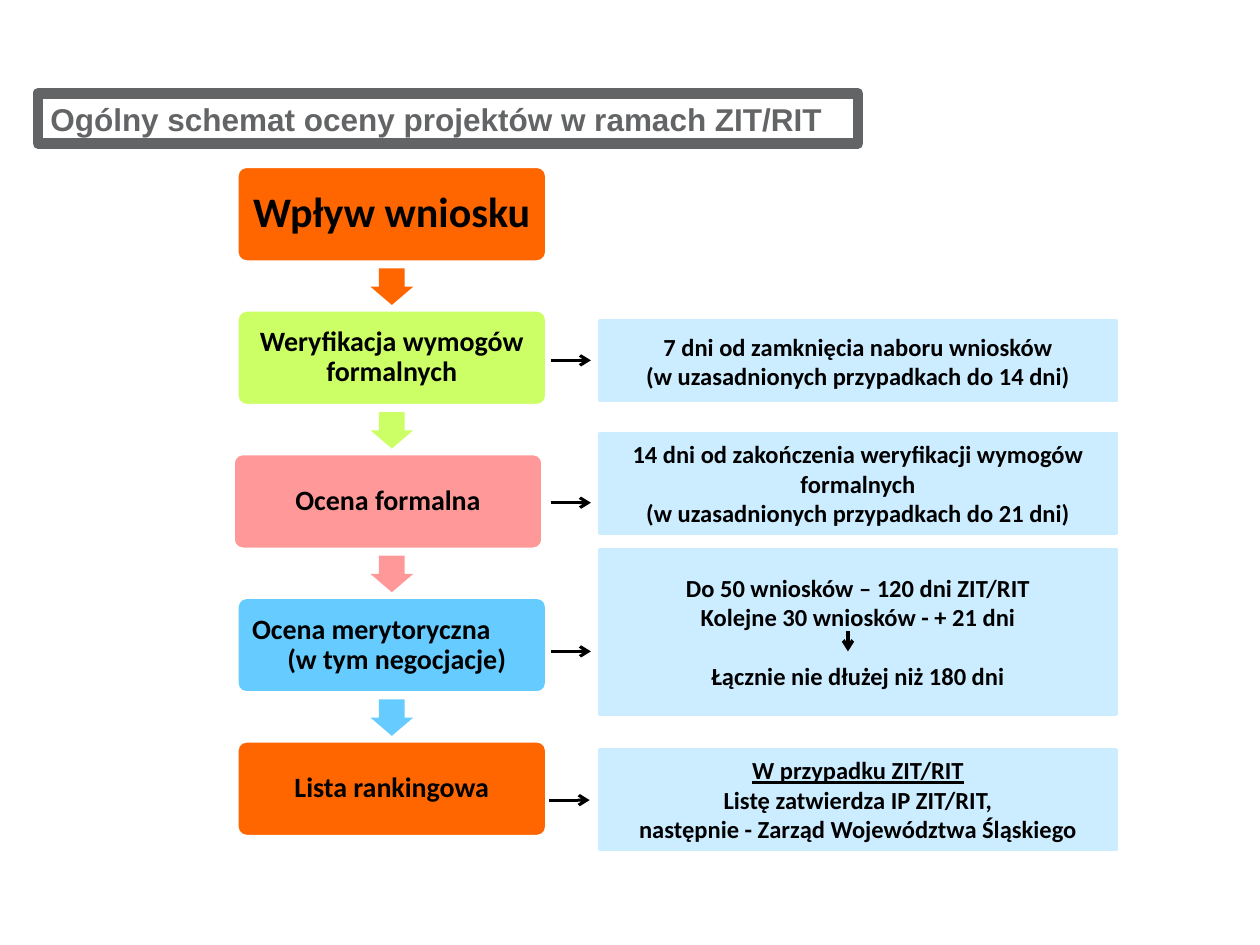
import pptx
import pptx.util
import pptx.dml.color
import pptx.enum.shapes
import pptx.enum.text
import pptx.oxml.ns
import lxml.etree

Inches = pptx.util.Inches
Pt = pptx.util.Pt
SHAPES = pptx.enum.shapes.MSO_SHAPE
ALIGN = pptx.enum.text.PP_ALIGN
ANCHOR = pptx.enum.text.MSO_ANCHOR

STEP_LEFT, STEP_TOP, STEP_PITCH = 1.88, 1.32, 1.14
STEP_WIDTH, STEP_HEIGHT = 2.46, 0.76

STEPS = [
    ("Wpływ wniosku", "FF6600", 0, 24),
    ("Weryfikacja wymogów formalnych", "CCFF66", 0, 16),
    ("Ocena formalna", "FF9999", -0.03, 16),
    ("Ocena merytoryczna\n(w tym negocjacje)", "66CCFF", 0, 16),
    ("Lista rankingowa", "FF6600", 0, 16),
]
DEADLINES = [
    (2.55, 0.63, "7 dni od zamknięcia naboru wniosków\n"
                 "(w uzasadnionych przypadkach do 14 dni)"),
    (3.44, 0.79, "14 dni od zakończenia weryfikacji wymogów formalnych\n"
                 "(w uzasadnionych przypadkach do 21 dni)"),
    (4.36, 1.31, "Do 50 wniosków – 120 dni ZIT/RIT\n"
                 "Kolejne 30 wniosków - + 21 dni\n"
                 "Łącznie nie dłużej niż 180 dni"),
    (5.95, 0.79, "W przypadku ZIT/RIT\n"
                 "Listę zatwierdza IP ZIT/RIT,\n"
                 "następnie - Zarząd Województwa Śląskiego"),
]
LINKS = [(4.37, 2.86), (4.37, 3.99), (4.37, 5.17), (4.36, 6.35)]


def rgb(color):
    return pptx.dml.color.RGBColor.from_string(color)


def write_text(shape, text, size, color="000000", font="Calibri", align=ALIGN.CENTER):
    frame = shape.text_frame
    frame.text = text
    frame.word_wrap = True
    frame.vertical_anchor = ANCHOR.MIDDLE
    for para in frame.paragraphs:
        para.alignment = align
        for span in para.runs:
            span.font.size = Pt(size)
            span.font.name = font
            span.font.bold = True
            span.font.color.rgb = rgb(color)
    return frame


def add_block(page, kind, left, top, width, height, fill, line=None):
    shape = page.shapes.add_shape(
        kind, Inches(left), Inches(top), Inches(width), Inches(height))
    shape.shadow.inherit = False
    shape.fill.solid()
    shape.fill.fore_color.rgb = rgb(fill)
    if line:
        shape.line.color.rgb = rgb(line)
        shape.line.width = Pt(2)
    else:
        shape.line.fill.background()
    return shape


def add_step(page, left, top, text, color, size):
    box = add_block(page, SHAPES.ROUNDED_RECTANGLE, left, top,
                    STEP_WIDTH, STEP_HEIGHT, color, "FFFFFF")
    box.adjustments[0] = 0.1
    frame = write_text(box, text, size)
    inset = Inches(0.1)
    frame.margin_left = frame.margin_right = inset
    frame.margin_top = frame.margin_bottom = inset
    for para in frame.paragraphs:
        para.line_spacing = 0.9
    return frame


def add_down_arrow(page, top, color):
    arrow = add_block(page, SHAPES.DOWN_ARROW, 2.94, top, 0.34, 0.29, color)
    arrow.adjustments[0] = 0.6
    arrow.adjustments[1] = 0.5


def add_deadline(page, top, height, text):
    box = add_block(page, SHAPES.RECTANGLE, 4.76, top, 4.1, height, "CCECFF", "CCECFF")
    return write_text(box, text, 14)


def add_arrow(page, start, end, width):
    arrow = page.shapes.add_connector(
        pptx.enum.shapes.MSO_CONNECTOR.STRAIGHT,
        *(Inches(value) for value in start + end))
    arrow.line.color.rgb = rgb("000000")
    arrow.line.width = Pt(width)
    qn = pptx.oxml.ns.qn
    lxml.etree.SubElement(arrow.line._get_or_add_ln(), qn("a:tailEnd"), type="arrow")
    lxml.etree.SubElement(arrow._element.spPr, qn("a:effectLst"))


def set_title(page, text):
    title = page.shapes.title
    title.left, title.top = Inches(0.3), Inches(0.74)
    title.width, title.height = Inches(6.51), Inches(0.4)
    title.line.color.rgb = rgb("636466")
    title.line.width = Pt(6)
    frame = write_text(title, text, 18, "636466", "Arial", ALIGN.LEFT)
    frame.auto_size = pptx.enum.text.MSO_AUTO_SIZE.NONE
    frame.vertical_anchor = ANCHOR.TOP


def main():
    deck = pptx.Presentation()
    deck.slide_width, deck.slide_height = Inches(10), Inches(7.5)
    page = deck.slides.add_slide(deck.slide_layouts[5])
    set_title(page, "Ogólny schemat oceny projektów w ramach ZIT/RIT")

    step_frames = []
    for index, (text, color, shift, size) in enumerate(STEPS):
        top = STEP_TOP + index * STEP_PITCH
        step_frames.append(add_step(page, STEP_LEFT + shift, top, text, color, size))
        if index < len(STEPS) - 1:
            add_down_arrow(page, top + 0.81, color)
    merit_lines = step_frames[3].paragraphs
    for para in merit_lines:
        para.alignment = ALIGN.LEFT
    merit_lines[1]._p.get_or_add_pPr().set("marL", str(Inches(0.28)))

    deadline_frames = [add_deadline(page, *deadline) for deadline in DEADLINES]
    deadline_frames[2].paragraphs[2].space_before = Pt(17)
    deadline_frames[3].paragraphs[0].runs[0].font.underline = True

    for left, middle in LINKS:
        add_arrow(page, (left, middle), (left + 0.32, middle), 1.75)
    add_arrow(page, (6.73, 5.01), (6.73, 5.17), 2)
    deck.save("out.pptx")


if __name__ == "__main__":
    main()
